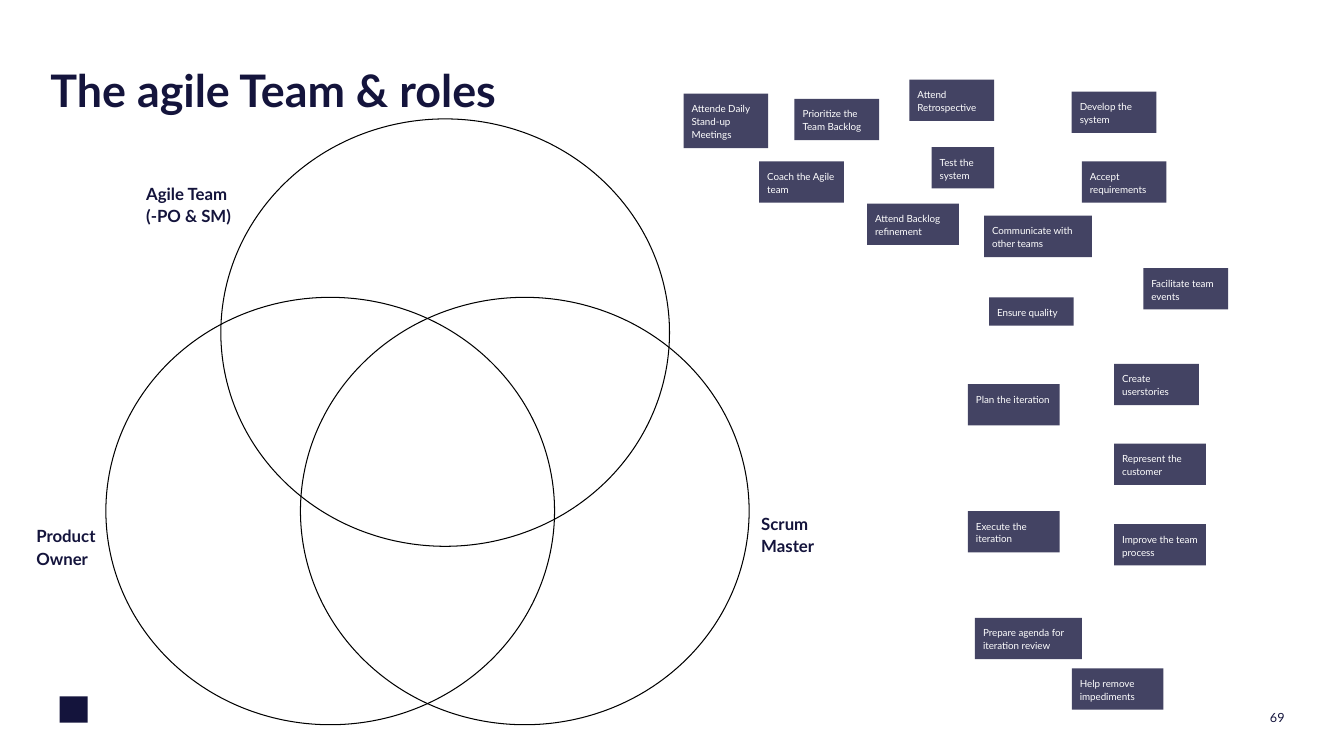
from dataclasses import dataclass

from pptx import Presentation
from pptx.dml.color import RGBColor
from pptx.enum.shapes import MSO_SHAPE
from pptx.enum.text import MSO_ANCHOR, MSO_AUTO_SIZE, PP_ALIGN
from pptx.util import Inches, Pt


@dataclass(frozen=True)
class Theme:
    font: str = "Lato"
    navy: RGBColor = RGBColor(0x14, 0x14, 0x3C)
    slate: RGBColor = RGBColor(0x43, 0x43, 0x63)
    white: RGBColor = RGBColor(0xFF, 0xFF, 0xFF)
    black: RGBColor = RGBColor(0, 0, 0)
    title_size: int = 32
    label_size: int = 12
    number_size: int = 9
    card_size: int = 7
    spacing: float = 1.1


class RolesPage:
    def __init__(self, deck, theme):
        self.theme = theme
        self.page = deck.slides.add_slide(deck.slide_layouts[5])

    def set_text(self, shape, text, size, color, bold=False, inset=0.0,
                 align=PP_ALIGN.LEFT, anchor=MSO_ANCHOR.TOP, wrap=True):
        frame = shape.text_frame
        frame.text = text
        frame.word_wrap = wrap
        frame.auto_size = MSO_AUTO_SIZE.NONE
        frame.vertical_anchor = anchor
        frame.margin_left = frame.margin_right = Inches(inset)
        frame.margin_top = frame.margin_bottom = Inches(inset)
        for paragraph in frame.paragraphs:
            paragraph.alignment = align
            paragraph.line_spacing = self.theme.spacing
            paragraph.font.name = self.theme.font
            paragraph.font.size = Pt(size)
            paragraph.font.bold = bold
            paragraph.font.color.rgb = color

    def title(self, text, left, top, width, height):
        title = self.page.shapes.title
        title.left, title.top = Inches(left), Inches(top)
        title.width, title.height = Inches(width), Inches(height)
        self.set_text(title, text, self.theme.title_size, self.theme.navy,
                      bold=True, wrap=False)

    def label(self, text, left, top, width):
        box = self.page.shapes.add_textbox(
            Inches(left), Inches(top), Inches(width), Inches(0.42))
        self.set_text(box, text, self.theme.label_size, self.theme.navy, bold=True)

    def page_number(self, text, left, top, width, height):
        box = self.page.shapes.add_textbox(
            Inches(left), Inches(top), Inches(width), Inches(height))
        self.set_text(box, text, self.theme.number_size, self.theme.navy,
                      align=PP_ALIGN.RIGHT, anchor=MSO_ANCHOR.BOTTOM)

    def shape(self, kind, left, top, width, height):
        shape = self.page.shapes.add_shape(
            kind, Inches(left), Inches(top), Inches(width), Inches(height))
        shape.shadow.inherit = False
        return shape

    def block(self, left, top, width, height, color):
        block = self.shape(MSO_SHAPE.RECTANGLE, left, top, width, height)
        block.fill.solid()
        block.fill.fore_color.rgb = color
        block.line.fill.background()
        return block

    def card(self, text, left, top, width=0.84, height=0.41):
        card = self.block(left, top, width, height, self.theme.slate)
        self.set_text(card, text, self.theme.card_size, self.theme.white, inset=0.08)

    def circle(self, left, top):
        circle = self.shape(MSO_SHAPE.FLOWCHART_CONNECTOR, left, top, 4.45, 4.24)
        circle.fill.background()
        circle.line.color.rgb = self.theme.black
        circle.line.width = Pt(0)


CIRCLES = [(2.98, 2.95), (1.05, 2.95), (2.19, 1.18)]

LABELS = [
    ("Scrum Master", 7.55, 5.08, 0.75),
    ("Product Owner", 0.36, 5.2, 0.75),
    ("Agile Team\n(-PO & SM)", 1.45, 1.8, 1.06),
]

TASKS = [
    ("Attende Daily Stand-up Meetings", 6.78, 0.93, 0.84, 0.54),
    ("Prioritize the Team Backlog", 7.88, 0.98),
    ("Attend Retrospective", 9.02, 0.79),
    ("Test the system", 9.24, 1.46, 0.62),
    ("Develop the system", 10.63, 0.91),
    ("Accept requirements", 10.73, 1.6),
    ("Coach the Agile team", 7.53, 1.6),
    ("Attend Backlog refinement", 8.6, 2.02, 0.91),
    ("Create userstories", 11.05, 3.61),
    ("Facilitate team events", 11.34, 2.66),
    ("Communicate with other teams", 9.76, 2.14, 1.07),
    ("Improve the team process", 11.05, 5.2, 0.91),
    ("Ensure quality", 9.81, 2.95, 0.84, 0.28),
    ("Represent the customer", 11.05, 4.4, 0.91),
    ("Help remove impediments", 10.63, 6.63, 0.91),
    ("Plan the iteration", 9.6, 3.81, 0.91),
    ("Execute the iteration", 9.6, 5.07, 0.91),
    ("Prepare agenda for iteration review", 9.67, 6.13, 1.06),
]


def main():
    deck = Presentation()
    deck.slide_width, deck.slide_height = Inches(13.33), Inches(7.5)
    theme = Theme()
    roles = RolesPage(deck, theme)
    roles.title("The agile Team & roles", 0.5, 0.57, 4.89, 0.56)
    roles.block(0.59, 6.91, 0.28, 0.26, theme.navy)
    roles.page_number("69", 12.09, 6.85, 0.65, 0.34)
    for circle in CIRCLES:
        roles.circle(*circle)
    for label in LABELS:
        roles.label(*label)
    for task in TASKS:
        roles.card(*task)
    deck.save("out.pptx")


if __name__ == "__main__":
    main()
